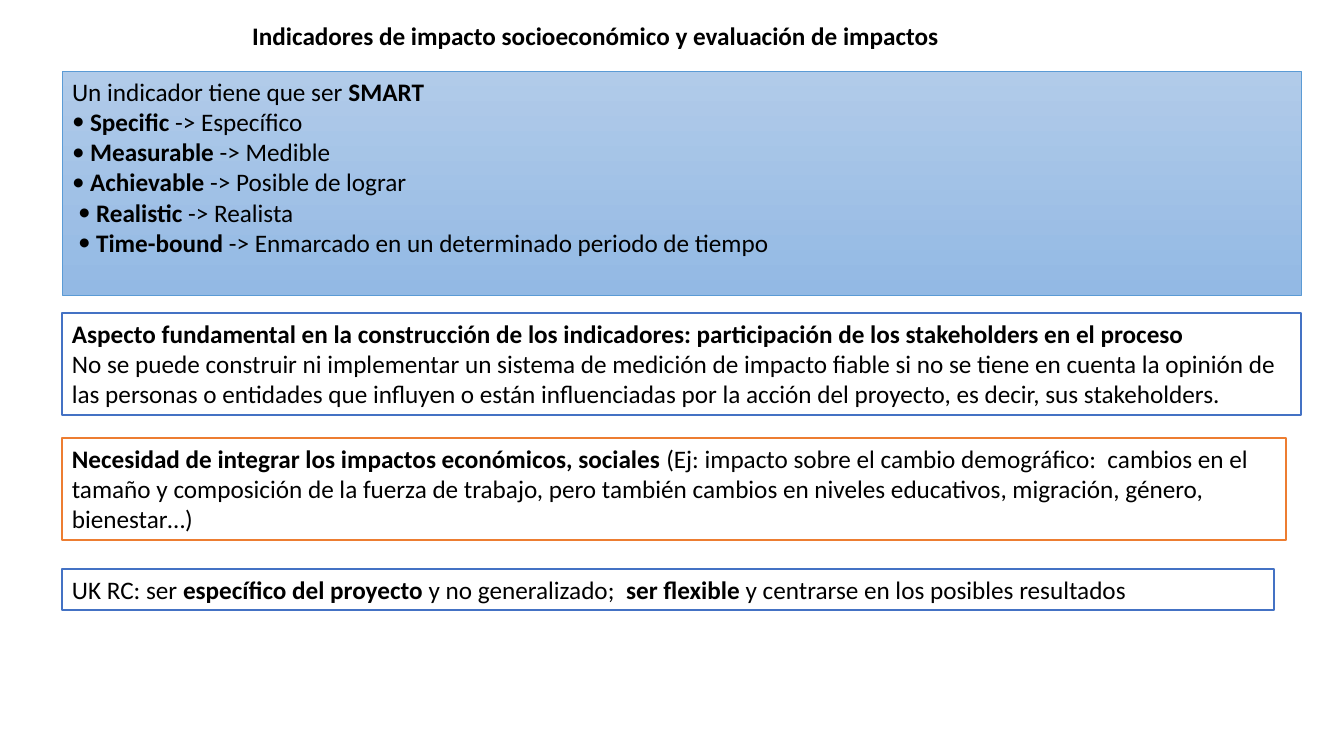
from dataclasses import dataclass

from lxml import etree
from pptx import Presentation
from pptx import util as u
from pptx.dml import color
from pptx.enum import shapes, text
from pptx.oxml import ns

SLIDE_WIDTH, SLIDE_HEIGHT = 1344, 756
EMU_PER_PX = 12192000 / SLIDE_WIDTH
LEFT = 62
BULLET_GAP = 18


def px(length: int) -> u.Emu:
    return u.Emu(round(length * EMU_PER_PX))


@dataclass(frozen=True)
class Theme:
    font: str = "Calibri"
    size: int = 18
    ink: str = "000000"
    paper: str = "FFFFFF"
    blue: str = "4472C4"
    orange: str = "ED7D31"
    smart_line: str = "5B9BD5"
    smart_top: str = "B1CBE9"
    smart_bottom: str = "93B9E4"


THEME = Theme()


@dataclass(frozen=True)
class Criterion:
    name: str
    meaning: str
    bullet_left: int = 0


@dataclass(frozen=True)
class Card:
    top: int
    width: int
    height: int
    line: str
    paragraphs: tuple[str, ...]


# Content: ** marks the start and end of bold text
TITLE = "**Indicadores de impacto socioeconómico y evaluación de impactos **"
SMART_HEADING = "Un indicador tiene que ser **SMART**"
CRITERIA = (
    Criterion("Specific", "Específico"),
    Criterion("Measurable", "Medible"),
    Criterion("Achievable", "Posible de lograr"),
    Criterion("Realistic", "Realista", bullet_left=6),
    Criterion("Time-bound", "Enmarcado en un determinado periodo de tiempo", bullet_left=6),
)
CARDS = (
    Card(313, 1239, 102, THEME.blue, (
        "**Aspecto fundamental en la construcción de los indicadores: "
        "participación de los stakeholders en el proceso**",
        "No se puede construir ni implementar un sistema de medición de impacto fiable "
        "si no se tiene en cuenta la opinión de las personas o entidades que influyen o "
        "están influenciadas por la acción del proyecto, es decir, sus stakeholders.",
    )),
    Card(438, 1224, 102, THEME.orange, (
        "**Necesidad de integrar los impactos económicos, sociales **"
        "(Ej: impacto sobre el cambio demográfico:  cambios en el tamaño y composición "
        "de la fuerza de trabajo, pero también cambios en niveles educativos, "
        "migración, género, bienestar…)",
    )),
    Card(569, 1212, 41, THEME.blue, (
        "UK RC: ser **específico del proyecto **y no generalizado;  "
        "**ser flexible **y centrarse en los posibles resultados",
    )),
)


def rgb(value: str) -> color.RGBColor:
    return color.RGBColor.from_string(value)


def place(shape, left: int, top: int, width: int, height: int) -> None:
    shape.left, shape.top = px(left), px(top)
    shape.width, shape.height = px(width), px(height)


def outline(shape, line: str, points: float) -> None:
    shape.line.color.rgb = rgb(line)
    shape.line.width = u.Pt(points)


def write(paragraph, marked: str, *, align=text.PP_ALIGN.LEFT) -> None:
    paragraph.alignment = align
    paragraph.space_before = paragraph.space_after = u.Pt(0)
    for index, part in enumerate(marked.split("**")):
        if part:
            run = paragraph.add_run()
            run.text = part
            run.font.name = THEME.font
            run.font.size = u.Pt(THEME.size)
            run.font.bold = index % 2 == 1
            run.font.color.rgb = rgb(THEME.ink)


def fill_frame(shape, paragraphs: tuple[str, ...], *, align=text.PP_ALIGN.LEFT) -> None:
    frame = shape.text_frame
    frame.word_wrap = True
    frame.auto_size = text.MSO_AUTO_SIZE.NONE
    frame.vertical_anchor = text.MSO_ANCHOR.TOP
    for index, marked in enumerate(paragraphs):
        paragraph = frame.add_paragraph() if index else frame.paragraphs[0]
        write(paragraph, marked, align=align)


def set_bullet(paragraph, *, left: int = 0, bullet: str = "") -> None:
    gap = BULLET_GAP if bullet else 0
    properties = paragraph._p.get_or_add_pPr()
    properties.set("marL", str(px(left + gap)))
    properties.set("indent", str(px(-gap)))
    if bullet:
        etree.SubElement(properties, ns.qn("a:buFont"), typeface=THEME.font)
        etree.SubElement(properties, ns.qn("a:buChar"), char=bullet)
    else:
        etree.SubElement(properties, ns.qn("a:buNone"))


def draw_smart_list(shape) -> None:
    place(shape, LEFT, 71, 1239, 224)
    shape.fill.gradient()
    shape.fill.gradient_angle = 270
    for stop, value in zip(shape.fill.gradient_stops, (THEME.smart_top, THEME.smart_bottom)):
        stop.color.rgb = rgb(value)
    outline(shape, THEME.smart_line, 0.5)
    lines = tuple(f"**{item.name}** -> {item.meaning}" for item in CRITERIA)
    fill_frame(shape, (SMART_HEADING, *lines))
    heading, *items = shape.text_frame.paragraphs
    set_bullet(heading)
    for paragraph, item in zip(items, CRITERIA):
        set_bullet(paragraph, left=item.bullet_left, bullet="•")


def draw_card(slide, card: Card) -> None:
    shape = slide.shapes.add_shape(
        shapes.MSO_SHAPE.RECTANGLE, px(LEFT), px(card.top), px(card.width), px(card.height))
    shape.shadow.inherit = False
    shape.fill.solid()
    shape.fill.fore_color.rgb = rgb(THEME.paper)
    outline(shape, card.line, 1)
    fill_frame(shape, card.paragraphs)


def main() -> None:
    presentation = Presentation()
    presentation.slide_width, presentation.slide_height = px(SLIDE_WIDTH), px(SLIDE_HEIGHT)
    slide = presentation.slides.add_slide(presentation.slide_layouts[1])

    # Title
    title = slide.shapes.title
    place(title, LEFT, 15, 1073, 41)
    fill_frame(title, (TITLE,), align=text.PP_ALIGN.CENTER)

    # SMART criteria
    draw_smart_list(slide.placeholders[1])

    # Framed statements
    for card in CARDS:
        draw_card(slide, card)

    presentation.save("out.pptx")


if __name__ == "__main__":
    main()
